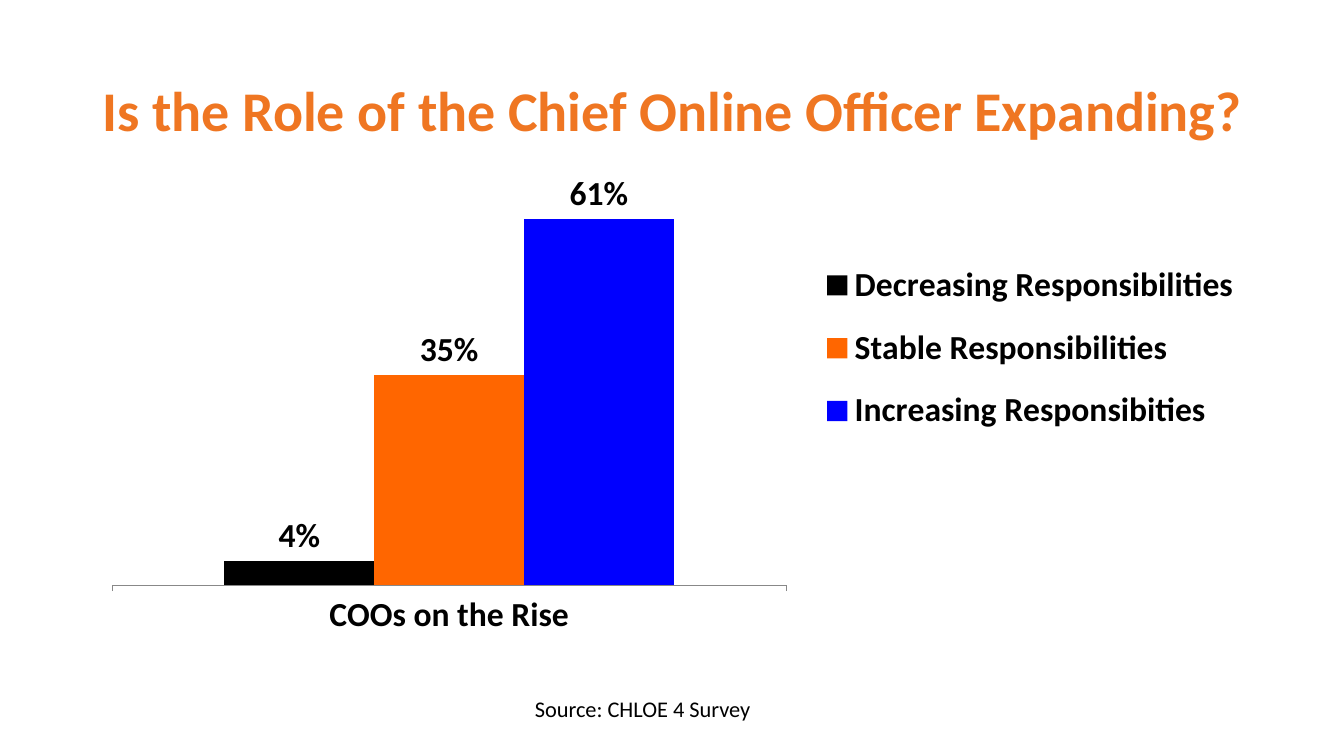
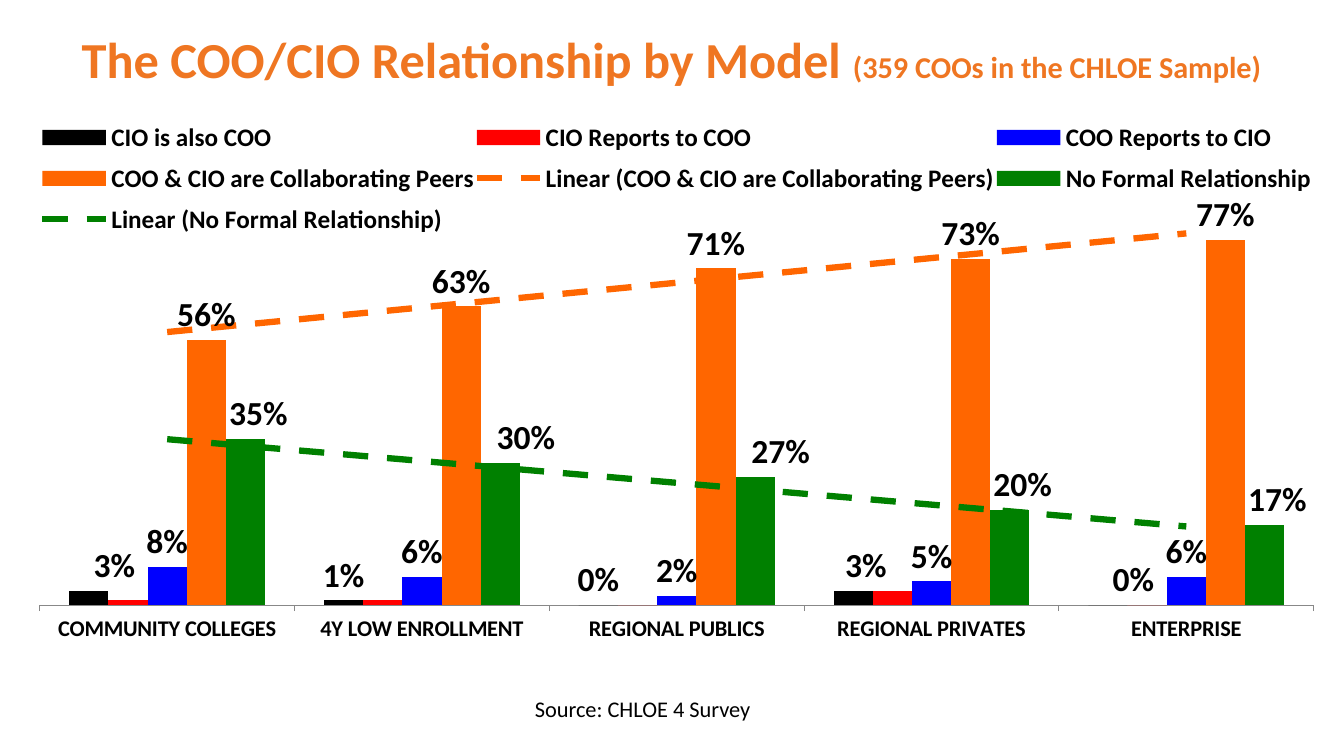
from lxml import etree
from pptx import Presentation
from pptx.chart.data import CategoryChartData
from pptx.dml.color import RGBColor
from pptx.enum.chart import XL_CHART_TYPE, XL_LABEL_POSITION, XL_LEGEND_POSITION, XL_TICK_MARK
from pptx.enum.text import MSO_ANCHOR, PP_ALIGN
from pptx.oxml import parse_xml
from pptx.oxml.ns import nsdecls, qn
from pptx.util import Cm, Pt

COLUMNS = XL_CHART_TYPE.COLUMN_CLUSTERED
OUTSIDE_END = XL_LABEL_POSITION.OUTSIDE_END
LEGEND_RIGHT = XL_LEGEND_POSITION.RIGHT
TICK_OUT, TICK_NONE = XL_TICK_MARK.OUTSIDE, XL_TICK_MARK.NONE
MIDDLE, TOP = MSO_ANCHOR.MIDDLE, MSO_ANCHOR.TOP
LEFT, CENTER = PP_ALIGN.LEFT, PP_ALIGN.CENTER

# Shared style
FONT = "Calibri"
TITLE_COLOR = "EF7622"
BLACK, ORANGE, BLUE, RED, GREEN = "000000", "FF6600", "0000FF", "FF0000", "008000"
AXIS_GRAY = "888888"
LABEL_SIZE = 24
SOURCE_BOX = (13.23, 17.4, 7.42, 0.94)
SOURCE_TEXT = "Source: CHLOE 4 Survey"


def rgb(value):
    return RGBColor.from_string(value)


def place(parent, index, tags, values):
    """Give a chart part a manual layout as fractions of the chart."""
    for old in parent.findall(qn("c:layout")):
        parent.remove(old)
    layout = etree.Element(qn("c:layout"))
    manual = etree.SubElement(layout, qn("c:manualLayout"))
    for tag, value in zip(tags, values):
        etree.SubElement(manual, qn(f"c:{tag}")).set("val", str(value))
    parent.insert(index, layout)


# Series: name, values, colour, labelled, trend line, sideways label shifts
slides = [
    {
        "title": [("Is the Role of the Chief Online Officer Expanding?", 40)],
        "title_box": (2.34, 1.02, 29.67, 3.68),
        "align": LEFT,
        "chart_box": (2.24, 3.91, 29.29, 12.32),
        "plot": (0.02, 0.02, 0.58, 0.86),
        "legend": (0.63, 0.18, 0.36, 0.43),
        "maximum": 0.7,
        "category_size": 24,
        "legend_size": 24,
        "categories": ["COOs on the Rise"],
        "series": [
            ("Decreasing Responsibilities", [0.04], BLACK, True, False, {}),
            ("Stable Responsibilities", [0.35], ORANGE, True, False, {}),
            ("Increasing Responsibities", [0.61], BLUE, True, False, {}),
        ],
    },
    {
        "title": [("The COO/CIO Relationship by Model ", 36),
                  ("(359 COOs in the CHLOE Sample) ", 21.6)],
        "title_box": (0.74, 0.36, 32.54, 2.41),
        "align": CENTER,
        "chart_box": (0.99, 2.54, 32.13, 13.97),
        "plot": (0, 0.14, 1, 0.77),
        "legend": (0, 0.02, 1, 0.24),
        "maximum": 0.9,
        "category_size": 16,
        "legend_size": 18,
        "categories": ["COMMUNITY COLLEGES", "4Y LOW ENROLLMENT", "REGIONAL PUBLICS",
                       "REGIONAL PRIVATES", "ENTERPRISE"],
        "series": [
            ("CIO is also COO", [0.03, 0.01, 0, 0.03, 0], BLACK, True, False,
             {0: 0.02, 3: 0.01, 4: 0.02}),
            ("CIO Reports to COO", [0.01, 0.01, 0, 0.03, 0], RED, False, False, {}),
            ("COO Reports to CIO", [0.08, 0.06, 0.02, 0.05, 0.06], BLUE, True, False, {}),
            ("COO & CIO are Collaborating Peers", [0.56, 0.63, 0.71, 0.73, 0.77],
             ORANGE, True, True, {}),
            ("No Formal Relationship", [0.35, 0.3, 0.27, 0.2, 0.17], GREEN, True, True,
             {0: 0.01, 1: 0.02, 2: 0.02, 3: 0.01, 4: 0.01}),
        ],
    },
]

presentation = Presentation()
presentation.slide_width, presentation.slide_height = Cm(33.87), Cm(19.05)
blank_layout = presentation.slide_layouts[6]

for content in slides:
    slide = presentation.slides.add_slide(blank_layout)

    # Title and source
    for box, runs, color, bold, align, anchor, spacing in (
        (content["title_box"], content["title"], TITLE_COLOR, True, content["align"], MIDDLE, 0.9),
        (SOURCE_BOX, [(SOURCE_TEXT, 16)], BLACK, False, LEFT, TOP, 1.0),
    ):
        frame = slide.shapes.add_textbox(*map(Cm, box)).text_frame
        frame.word_wrap = True
        frame.vertical_anchor = anchor
        paragraph = frame.paragraphs[0]
        paragraph.alignment = align
        paragraph.line_spacing = spacing
        for text, size in runs:
            run = paragraph.add_run()
            run.text = text
            run.font.name, run.font.size, run.font.bold = FONT, Pt(size), bold
            run.font.color.rgb = rgb(color)

    # Chart
    data = CategoryChartData(number_format="0%")
    data.categories = content["categories"]
    for name, values, *_ in content["series"]:
        data.add_series(name, values)
    chart = slide.shapes.add_chart(COLUMNS, *map(Cm, content["chart_box"]), data).chart
    chart.has_title = False
    chart.font.name, chart.font.size = FONT, Pt(18)
    chart.font.color.rgb = rgb(BLACK)
    plot = chart.plots[0]
    plot.gap_width = 150
    plot.vary_by_categories = False

    # Axes
    category_axis, value_axis = chart.category_axis, chart.value_axis
    category_axis.major_tick_mark = TICK_OUT
    category_axis.minor_tick_mark = TICK_NONE
    category_axis.format.line.color.rgb = rgb(AXIS_GRAY)
    category_axis.format.line.width = Pt(0.75)
    category_axis.tick_labels.font.size = Pt(content["category_size"])
    category_axis.tick_labels.font.bold = True
    value_axis.minimum_scale, value_axis.maximum_scale = 0, content["maximum"]
    value_axis.has_major_gridlines = False
    value_axis.visible = False

    # Legend and plot area
    chart.has_legend = True
    legend = chart.legend
    legend.position = LEGEND_RIGHT
    legend.include_in_layout = False
    legend.font.size, legend.font.bold = Pt(content["legend_size"]), True
    frame_tags = ("xMode", "yMode", "x", "y", "w", "h")
    place(legend._element, 1, frame_tags, ("edge", "edge", *content["legend"]))
    plot_area = chart._chartSpace.find(".//" + qn("c:plotArea"))
    place(plot_area, 0, ("layoutTarget", *frame_tags),
          ("inner", "edge", "edge", *content["plot"]))

    # Series colours, labels and trend lines
    for series, (_, _, color, labelled, trend, shifts) in zip(plot.series, content["series"]):
        series.format.fill.solid()
        series.format.fill.fore_color.rgb = rgb(color)
        series.invert_if_negative = False
        if labelled:
            labels = series.data_labels
            labels.show_value = True
            labels.number_format, labels.number_format_is_linked = "0%", False
            point_labels = [series.points[index].data_label for index in shifts]
            for label in [labels, *point_labels]:
                label.position = OUTSIDE_END
                label.font.name, label.font.size, label.font.bold = FONT, Pt(LABEL_SIZE), True
                label.font.color.rgb = rgb(BLACK)
            for element in series._element.iter(qn("c:dLbl")):
                index = int(element.find(qn("c:idx")).get("val"))
                place(element, 1, ("x", "y"), (shifts[index], 0))
        if trend:
            series._element.find(qn("c:cat")).addprevious(parse_xml(
                f'<c:trendline {nsdecls("c", "a")}><c:spPr><a:ln w="{Pt(4.5)}">'
                f'<a:solidFill><a:srgbClr val="{color}"/></a:solidFill>'
                '<a:prstDash val="dash"/></a:ln></c:spPr>'
                '<c:trendlineType val="linear"/><c:dispRSqr val="0"/>'
                '<c:dispEq val="0"/></c:trendline>'))

presentation.save("out.pptx")
